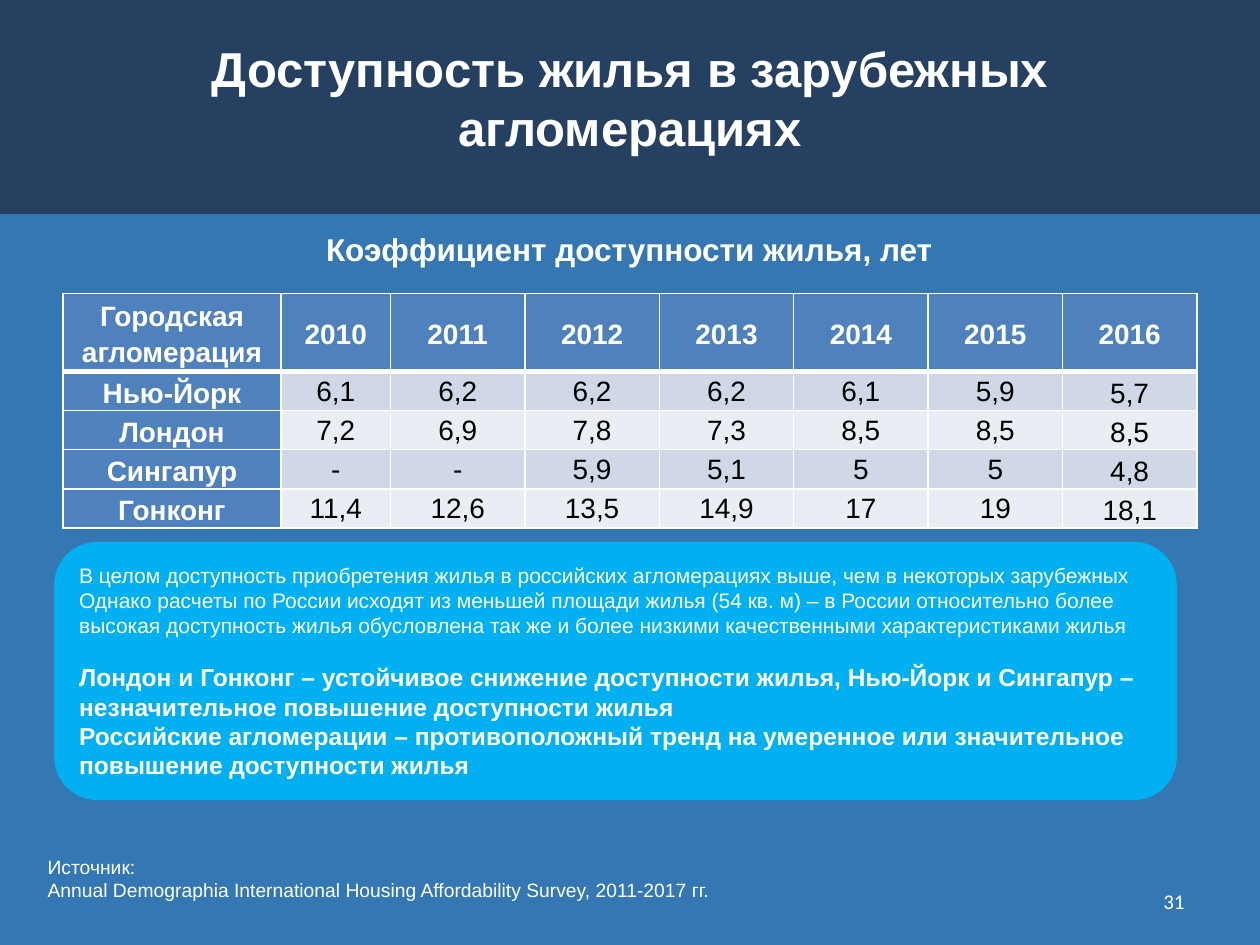
import pptx
import pptx.util
import pptx.dml.color
import pptx.enum.shapes
import pptx.enum.text
from lxml import etree

# Content
TITLE = "Доступность жилья в зарубежных агломерациях"
HEAD = "Коэффициент доступности жилья, лет"
ROWS = [
    ("Городская агломерация", *(str(year) for year in range(2010, 2017))),
    ("Нью-Йорк", "6,1", "6,2", "6,2", "6,2", "6,1", "5,9", "5,7"),
    ("Лондон", "7,2", "6,9", "7,8", "7,3", "8,5", "8,5", "8,5"),
    ("Сингапур", "-", "-", "5,9", "5,1", "5", "5", "4,8"),
    ("Гонконг", "11,4", "12,6", "13,5", "14,9", "17", "19", "18,1"),
]
FACTS = [
    "В целом доступность приобретения жилья в российских агломерациях выше, чем в некоторых зарубежных",
    "Однако расчеты по России исходят из меньшей площади жилья (54 кв. м) – в России относительно более "
    "высокая доступность жилья обусловлена так же и более низкими качественными характеристиками жилья",
]
TRENDS = [
    "Лондон и Гонконг – устойчивое снижение доступности жилья, Нью-Йорк и Сингапур – "
    "незначительное повышение доступности жилья",
    "Российские агломерации – противоположный тренд на умеренное или значительное "
    "повышение доступности жилья",
]
SOURCE = [
    "Источник:",
    "Annual Demographia International Housing Affordability Survey, 2011-2017 гг.",
]
PAGE = "31"

# Theme
THEME = {
    "font": "Arial", "page font": "Calibri",
    "back": "3477B2", "band": "254061", "card": "00B0F0", "head": "4F81BD",
    "odd": "D0D8E8", "even": "E9EDF4", "light": "FFFFFF", "dark": "000000",
    "title": 28, "sub": 18, "cell": 16, "trend": 14, "fact": 12, "page": 12, "source": 11,
}

# Grid of 100 columns by 75 rows: left, top, width, height
COLS, LINES = 100, 75
SPOTS = {
    "band": (0, 0, COLS, 17),
    "title": (5, 1.5, 90, 12.5),
    "sub": (22.8, 17.8, 54.3, 4),
    "table": (5, 23.3, 90, 18.6),
    "card": (4.3, 43, 89.1, 20.5),
    "source": (2.8, 67.4, 55.4, 4.7),
    "page": (71.7, 69.5, 23.3, 4),
}
NAME_COL, FIRST_COL = 17.3, 8.7
HEAD_ROW, BODY_ROW = 6.2, 3.1

ALIGN = pptx.enum.text.PP_ALIGN
ANCHOR = pptx.enum.text.MSO_ANCHOR
SHAPE = pptx.enum.shapes.MSO_SHAPE

deck = pptx.Presentation()
deck.slide_width = pptx.util.Inches(10)
deck.slide_height = pptx.util.Inches(7.5)
UNIT = deck.slide_width // COLS


def span(count):
    return pptx.util.Emu(round(count * UNIT))


def place(name):
    return [span(part) for part in SPOTS[name]]


def paint(fill, tone):
    fill.solid()
    fill.fore_color.rgb = pptx.dml.color.RGBColor.from_string(THEME[tone])


def write(frame, texts, size, align=ALIGN.LEFT, bold=False, tone="light", font="font", more=False):
    """Write one paragraph per text; more adds them below those already there."""
    for text in texts:
        para = frame.add_paragraph() if more else frame.paragraphs[0]
        more = True
        para.alignment = align
        run = para.add_run()
        run.text = text
        run.font.name = THEME[font]
        run.font.size = pptx.util.Pt(THEME[size])
        run.font.bold = bold
        run.font.color.rgb = pptx.dml.color.RGBColor.from_string(THEME[tone])


def add_text(name, texts, anchor=ANCHOR.TOP, wrap=True, **style):
    frame = slide.shapes.add_textbox(*place(name)).text_frame
    frame.word_wrap = wrap
    frame.vertical_anchor = anchor
    write(frame, texts, name, **style)


def add_block(kind, name):
    block = slide.shapes.add_shape(kind, *place(name))
    block.shadow.inherit = False
    block.line.fill.background()
    paint(block.fill, name)
    return block


def edge(cell, **widths):
    """Draw white cell borders, widths in points by side."""
    props = cell._tc.get_or_add_tcPr()
    space = pptx.oxml.ns.qn
    for side, width in widths.items():
        line = etree.SubElement(props, space("a:ln" + side), w=str(pptx.util.Pt(width)))
        fill = etree.SubElement(line, space("a:solidFill"))
        etree.SubElement(fill, space("a:srgbClr"), val=THEME["light"])


# Background, band and title
slide = deck.slides.add_slide(deck.slide_layouts[5])
paint(slide.background.fill, "back")
title = slide.shapes.title
band = add_block(SHAPE.RECTANGLE, "band")
title.element.addprevious(band.element)
title.left, title.top, title.width, title.height = place("title")
title.text_frame.auto_size = pptx.enum.text.MSO_AUTO_SIZE.NONE
title.text_frame.vertical_anchor = ANCHOR.MIDDLE
write(title.text_frame, [TITLE], "title", align=ALIGN.CENTER, bold=True)

# Page number and source
add_text("page", [PAGE], anchor=ANCHOR.MIDDLE, align=ALIGN.RIGHT, font="page font")
add_text("source", SOURCE, wrap=False)

# Card with findings
card = add_block(SHAPE.ROUNDED_RECTANGLE, "card").text_frame
card.word_wrap = True
card.vertical_anchor = ANCHOR.MIDDLE
write(card, FACTS, "fact")
write(card, TRENDS, "trend", bold=True, more=True)
card.paragraphs[len(FACTS)].space_before = pptx.util.Pt(14)

# Table
last = len(ROWS[0]) - 1
table = slide.shapes.add_table(len(ROWS), last + 1, *place("table")).table
table.horz_banding = False
year_col = (SPOTS["table"][2] - NAME_COL - FIRST_COL) / (last - 1)
for col, width in zip(table.columns, [NAME_COL, FIRST_COL] + [year_col] * (last - 1)):
    col.width = span(width)
for r, row in enumerate(ROWS):
    table.rows[r].height = span(BODY_ROW if r else HEAD_ROW)
    for c, text in enumerate(row):
        cell = table.cell(r, c)
        head = r == 0 or c == 0
        cell.margin_left = cell.margin_right = span(0.7)
        cell.margin_top = cell.margin_bottom = 0
        cell.vertical_anchor = ANCHOR.MIDDLE if head or c == last else ANCHOR.TOP
        edge(cell, L=1, R=1, T=3 if r == 1 else 1, B=1 if r else 3)
        paint(cell.fill, "head" if head else "odd" if r % 2 else "even")
        write(cell.text_frame, [text], "cell", align=ALIGN.CENTER, bold=head,
              tone="light" if head else "dark")
        cell.text_frame.paragraphs[0].line_spacing = 1.15

# Table heading
add_text("sub", [HEAD], align=ALIGN.CENTER, bold=True)

deck.save("out.pptx")
